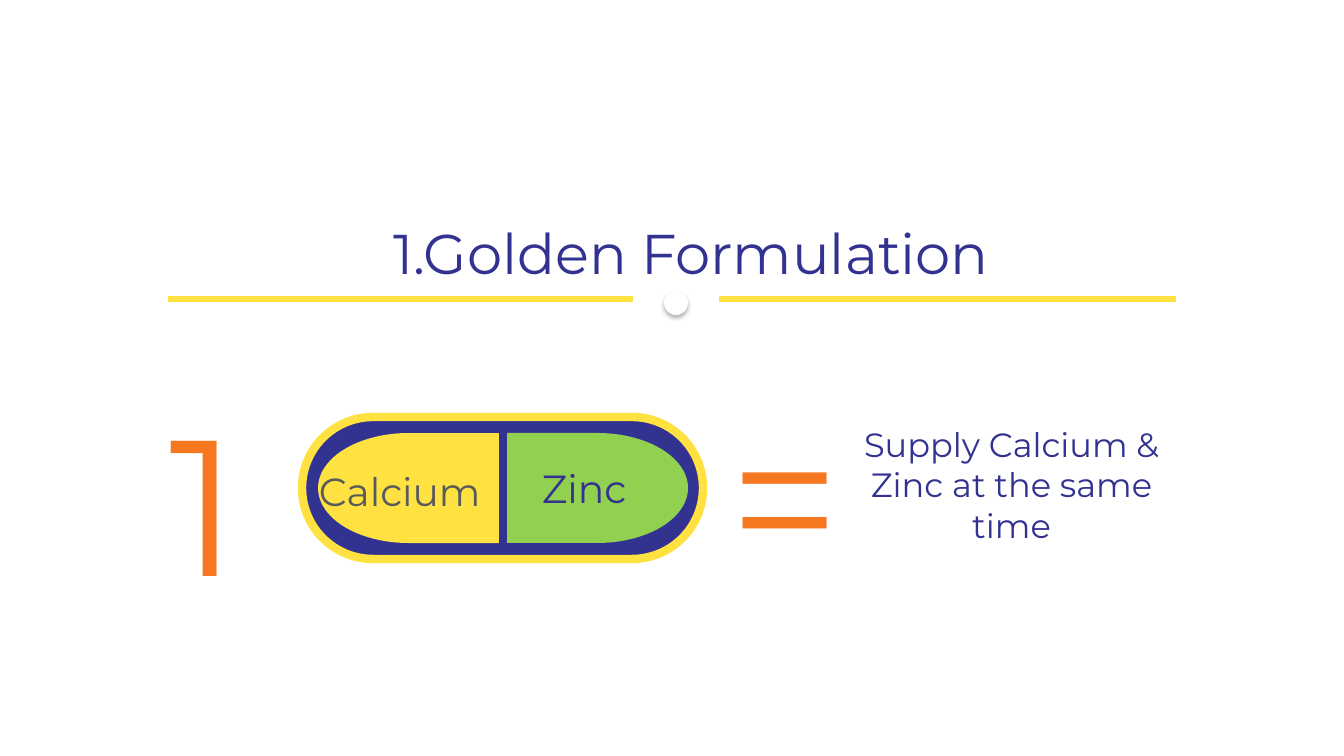
import pptx
import pptx.util
import pptx.dml.color
import pptx.enum.shapes
import pptx.enum.text
import lxml.etree
from dataclasses import dataclass

PX = 12192000 / 1344  # EMU in one px
SHAPE = pptx.enum.shapes.MSO_SHAPE
ALIGN = pptx.enum.text.PP_ALIGN
ANCHOR = pptx.enum.text.MSO_ANCHOR
A = "http://schemas.openxmlformats.org/drawingml/2006/main"


@dataclass(frozen=True)
class Theme:
    font: str = "Montserrat"
    navy: str = "323291"
    yellow: str = "FFE241"
    green: str = "92D050"
    orange: str = "F57820"
    grey: str = "5A5A5A"
    white: str = "FFFFFF"
    title: int = 40
    label: int = 28
    body: int = 24
    symbol: int = 138


def emu(px):
    return pptx.util.Emu(round(px * PX))


def rgb(color):
    return pptx.dml.color.RGBColor.from_string(color)


class Canvas:
    def __init__(self, slide, theme):
        self.theme = theme
        self.slide = slide
        self.shapes = slide.shapes

    def group(self):
        """Return a canvas that draws into a new group."""
        canvas = Canvas(self.slide, self.theme)
        canvas.shapes = self.shapes.add_group_shape().shapes
        return canvas

    def rule(self, x1, x2, y, color, width):
        line = self.shapes.add_connector(
            pptx.enum.shapes.MSO_CONNECTOR.STRAIGHT, emu(x1), emu(y), emu(x2), emu(y))
        line.line.color.rgb = rgb(color)
        line.line.width = pptx.util.Pt(width)
        lxml.etree.SubElement(line._element.spPr, f"{{{A}}}effectLst")

    def shape(self, kind, box, fill, line=None, width=0):
        sp = self.shapes.add_shape(kind, *map(emu, box))
        sp.shadow.inherit = False
        sp.fill.solid()
        sp.fill.fore_color.rgb = rgb(fill)
        if line:
            sp.line.color.rgb = rgb(line)
            sp.line.width = pptx.util.Pt(width)
        else:
            sp.line.fill.background()
        return sp

    def drop_shadow(self, sp, blur, dist, alpha):
        effects = sp._element.spPr.find(f"{{{A}}}effectLst")
        shadow = lxml.etree.SubElement(
            effects, f"{{{A}}}outerShdw", blurRad=str(pptx.util.Pt(blur)),
            dist=str(pptx.util.Pt(dist)), dir="5400000", algn="t", rotWithShape="0")
        color = lxml.etree.SubElement(shadow, f"{{{A}}}srgbClr", val="000000")
        lxml.etree.SubElement(color, f"{{{A}}}alpha", val=str(alpha * 1000))

    def label(self, sp, text, size, color, align, anchor=ANCHOR.TOP):
        tf = sp.text_frame
        tf.word_wrap = True
        tf.vertical_anchor = anchor
        p = tf.paragraphs[0]
        p.alignment = align
        r = p.add_run()
        r.text = text
        r.font.name = self.theme.font
        r.font.size = pptx.util.Pt(size)
        r.font.color.rgb = rgb(color)

    def text(self, box, text, size, color, align=ALIGN.LEFT):
        self.label(self.shapes.add_textbox(*map(emu, box)), text, size, color, align)


def main():
    prs = pptx.Presentation()
    prs.slide_width, prs.slide_height = emu(1344), emu(756)
    t = Theme()
    s = Canvas(prs.slides.add_slide(prs.slide_layouts[6]), t)

    # Title, with a broken rule and a dot below
    for x1, x2 in ((168, 633), (719, 1176)):
        s.rule(x1, x2, 299, t.yellow, 4.5)
    dot = s.shape(SHAPE.OVAL, (664, 291, 24, 24), t.white)
    s.drop_shadow(dot, 3.5, 2.2, 32)
    s.text((309, 214, 764, 78), "1.Golden Formulation", t.title, t.navy, ALIGN.CENTER)

    # Capsule with two halves
    capsule = s.group()
    shell = capsule.shape(SHAPE.ROUNDED_RECTANGLE, (302, 417, 401, 142),
                          t.navy, t.yellow, 6)
    shell.adjustments[0] = 0.5
    zinc = capsule.shape(SHAPE.FLOWCHART_DELAY, (507, 433, 181, 110), t.green)
    capsule.label(zinc, "Zinc", t.label, t.navy, ALIGN.CENTER, ANCHOR.MIDDLE)
    calcium = capsule.shape(SHAPE.FLOWCHART_DELAY, (318, 433, 181, 110), t.yellow)
    calcium.rotation = 180
    capsule.text((309, 462, 205, 57), "Calcium", t.label, t.grey)

    # Equation: number, equals sign, result
    s.text((160, 378, 79, 244), "1", t.symbol, t.orange)
    s.text((720, 370, 79, 244), "=", t.symbol, t.orange)
    s.text((846, 419, 331, 132), "Supply Calcium & Zinc at the same time",
           t.body, t.navy, ALIGN.CENTER)

    prs.save("out.pptx")


if __name__ == "__main__":
    main()
